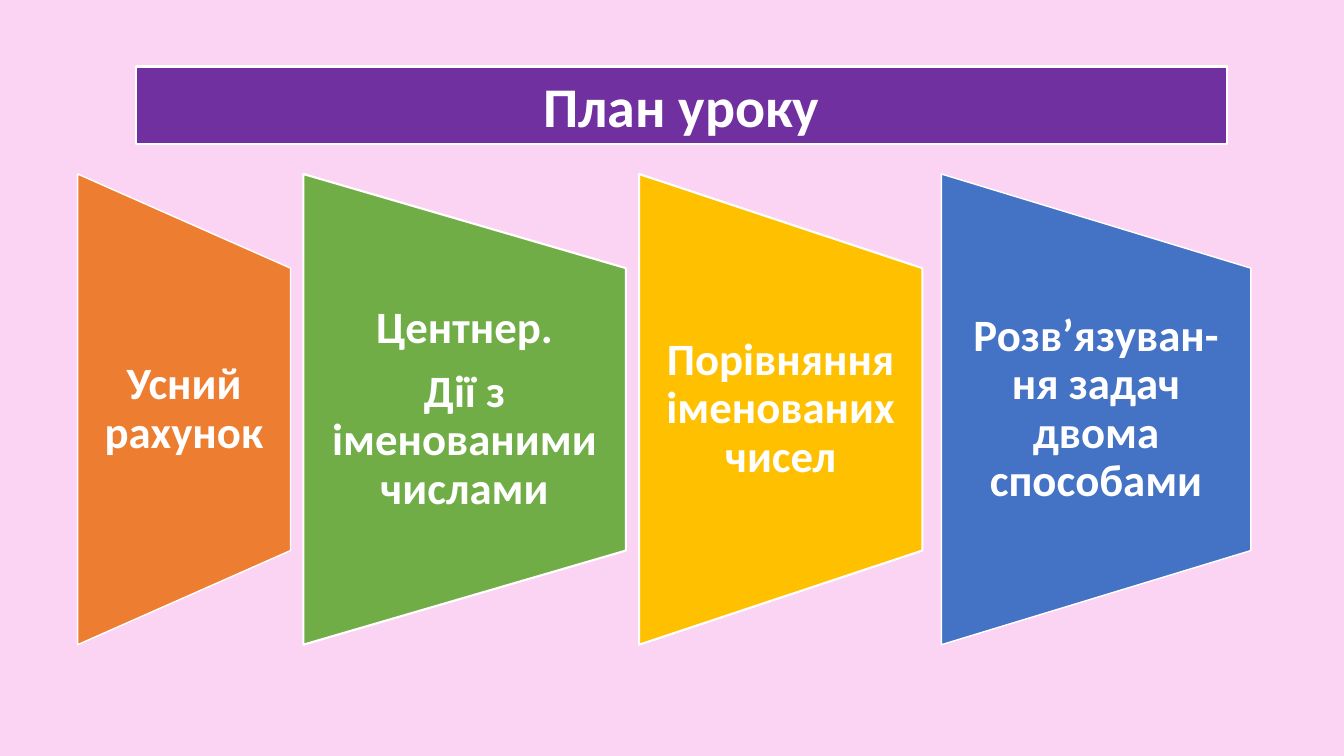
from pptx import Presentation
from pptx.dml.color import RGBColor
from pptx.enum.shapes import MSO_SHAPE
from pptx.enum.text import MSO_ANCHOR, PP_ALIGN
from pptx.util import Pt

RECTANGLE = MSO_SHAPE.RECTANGLE
TRAPEZOID = MSO_SHAPE.FLOWCHART_MANUAL_OPERATION
TOP, MIDDLE = MSO_ANCHOR.TOP, MSO_ANCHOR.MIDDLE
CENTER = PP_ALIGN.CENTER

WHITE = "FFFFFF"
PANEL_MIDDLE = 292.4
PANEL_HEIGHT = 336.2
TEXT_HEIGHT = 201.6

# left, width, fill, outline width, paragraphs
STEPS = [
    (55.5, 152, "ED7D31", 1, ["Усний рахунок"]),
    (216.7, 230.4, "70AD47", 1.5, ["Центнер.", "Дії з іменованими числами"]),
    (456.5, 202.3, "FFC000", 1.5, ["Порівняння іменованих чисел"]),
    (672.5, 221, "4472C4", 1, ["Розв’язуван-ня задач двома способами"]),
]


def color(value):
    return RGBColor.from_string(value)


def add_filled_shape(slide, kind, left, top, width, height, fill, line_width):
    shape = slide.shapes.add_shape(kind, Pt(left), Pt(top), Pt(width), Pt(height))
    shape.shadow.inherit = False
    shape.fill.solid()
    shape.fill.fore_color.rgb = color(fill)
    shape.line.color.rgb = color(WHITE)
    shape.line.width = Pt(line_width)
    return shape


def write_text(shape, paragraphs, size, anchor=MIDDLE, side_inset=7.2,
               end_inset=3.6, line_spacing=1.0, gap=0):
    """Fill a shape with bold, centred white paragraphs set gap points apart."""
    frame = shape.text_frame
    frame.word_wrap = True
    frame.vertical_anchor = anchor
    frame.margin_left = frame.margin_right = Pt(side_inset)
    frame.margin_top = frame.margin_bottom = Pt(end_inset)
    for index, text in enumerate(paragraphs):
        paragraph = frame.add_paragraph() if index else frame.paragraphs[0]
        paragraph.alignment = CENTER
        paragraph.line_spacing = line_spacing
        paragraph.space_before = Pt(gap if index else 0)
        run = paragraph.add_run()
        run.text = text
        run.font.name = "Calibri"
        run.font.size = Pt(size)
        run.font.bold = True
        run.font.color.rgb = color(WHITE)


def add_title(slide, text):
    banner = add_filled_shape(slide, RECTANGLE, 97.2, 47.5, 779, 55.5, "7030A0", 1.5)
    write_text(banner, [text], 40, anchor=TOP)


def add_step(slide, left, width, fill, line_width, paragraphs):
    """Add a trapezoid turned on its side, with upright text over it."""
    panel = add_filled_shape(
        slide, TRAPEZOID, left + (width - PANEL_HEIGHT) / 2, PANEL_MIDDLE - width / 2,
        PANEL_HEIGHT, width, fill, line_width)
    panel.rotation = 270
    label = slide.shapes.add_textbox(
        Pt(left), Pt(PANEL_MIDDLE - TEXT_HEIGHT / 2), Pt(width), Pt(TEXT_HEIGHT))
    write_text(label, paragraphs, 32, side_inset=16, end_inset=0,
               line_spacing=0.9, gap=11)


def main():
    presentation = Presentation()
    presentation.slide_width = Pt(960)
    presentation.slide_height = Pt(540)
    slide = presentation.slides.add_slide(presentation.slide_layouts[6])
    slide.background.fill.solid()
    slide.background.fill.fore_color.rgb = color("FCD4F3")
    add_title(slide, "План уроку")
    for step in STEPS:
        add_step(slide, *step)
    presentation.save("out.pptx")


if __name__ == "__main__":
    main()
